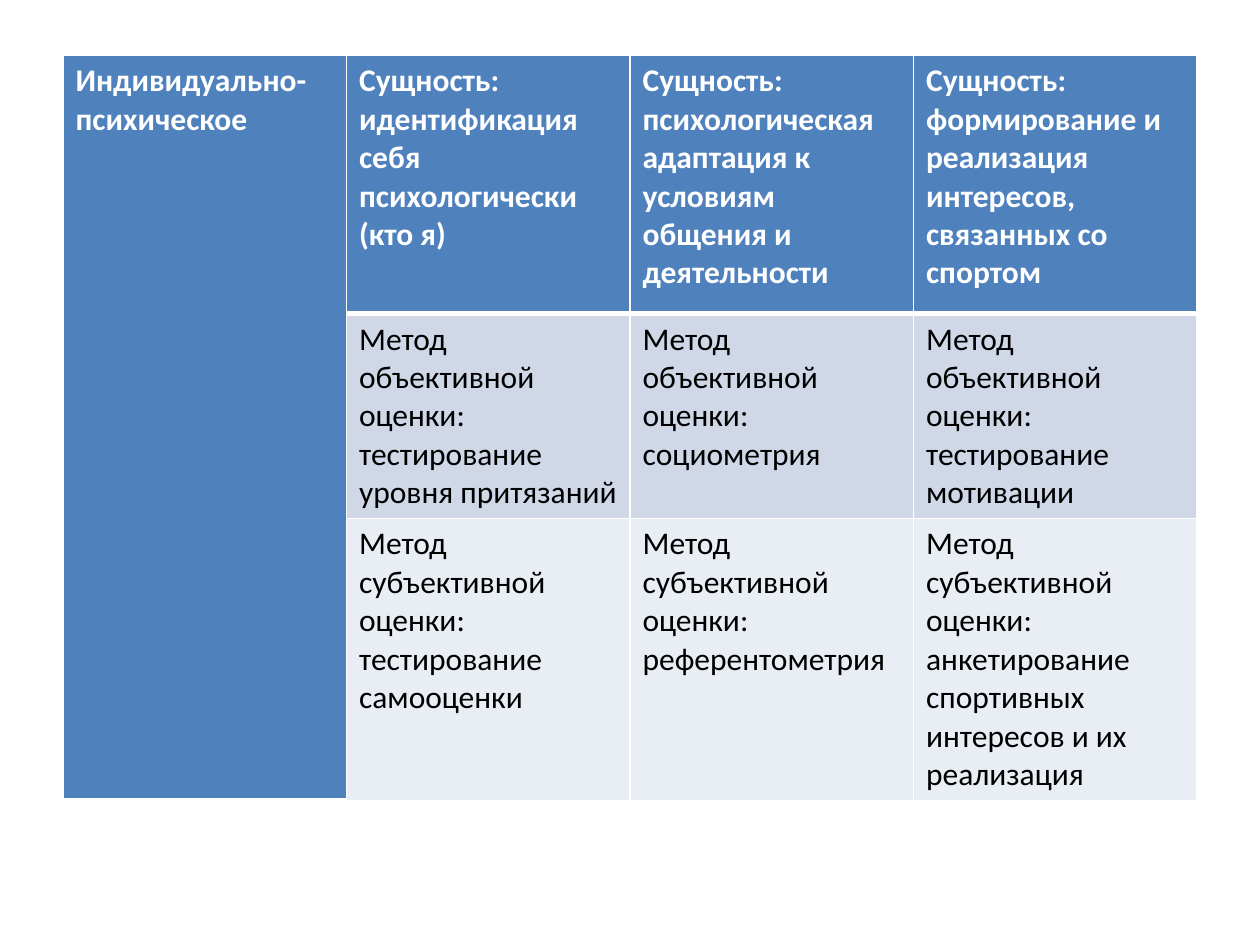
from lxml import etree
from pptx import Presentation
from pptx import util as u
from pptx.dml.color import RGBColor
from pptx.oxml.ns import qn

WIDTH, HEIGHT = 10, 7.5
COLUMN = 2.25
ROW_HEIGHTS = (2.05, 1.62, 2.23)

ASPECT = "Индивидуально-психическое"
ESSENCE = (
    "идентификация себя психологически (кто я)",
    "психологическая адаптация к условиям общения и деятельности",
    "формирование и реализация интересов, связанных со спортом",
)
OBJECTIVE = (
    "тестирование уровня притязаний",
    "социометрия",
    "тестирование мотивации",
)
SUBJECTIVE = (
    "тестирование самооценки",
    "референтометрия",
    "анкетирование спортивных интересов и их реализация",
)
# Lead-in, entries and band fill of each row
BANDS = (
    ("Сущность", ESSENCE, "4F81BD"),
    ("Метод объективной оценки", OBJECTIVE, "D0D8E8"),
    ("Метод субъективной оценки", SUBJECTIVE, "E9EDF4"),
)


def colour(value):
    return RGBColor.from_string(value)


class MethodsSlide:
    """Holds the style and the slide being built."""

    font, size = "Calibri", 18
    rule, header_text, body_text = "FFFFFF", "FFFFFF", "000000"

    def __init__(self, deck):
        self.slide = deck.slides.add_slide(deck.slide_layouts[6])

    def borders(self, cell, top=1, bottom=1):
        """Draw the rules round a cell; must run before the cell is filled."""
        properties = cell._tc.get_or_add_tcPr()
        for side, points in (("L", 1), ("R", 1), ("T", top), ("B", bottom)):
            line = etree.SubElement(properties, qn(f"a:ln{side}"), w=str(u.Pt(points)))
            fill = etree.SubElement(line, qn("a:solidFill"))
            etree.SubElement(fill, qn("a:srgbClr"), val=self.rule)

    def cell(self, cell, fill, wording="", header=False, **rules):
        self.borders(cell, **rules)
        cell.fill.solid()
        cell.fill.fore_color.rgb = colour(fill)
        if wording:
            run = cell.text_frame.paragraphs[0].add_run()
            run.text = wording
            run.font.name, run.font.size = self.font, u.Pt(self.size)
            run.font.bold = header
            run.font.color.rgb = colour(self.header_text if header else self.body_text)

    def table(self, left, top, bands, aspect):
        columns = len(bands[0][1]) + 1
        grid = self.slide.shapes.add_table(
            len(bands), columns, u.Inches(left), u.Inches(top),
            u.Inches(columns * COLUMN), u.Inches(sum(ROW_HEIGHTS))).table
        for column in grid.columns:
            column.width = u.Inches(COLUMN)
        for row, height in zip(grid.rows, ROW_HEIGHTS):
            row.height = u.Inches(height)

        grid.cell(0, 0).merge(grid.cell(len(bands) - 1, 0))
        for r, (lead, entries, fill) in enumerate(bands):
            header = r == 0
            self.cell(grid.cell(r, 0), bands[0][2], aspect if header else "",
                      header=True, bottom=3 if header else 1)
            for c, entry in enumerate(entries, start=1):
                self.cell(grid.cell(r, c), fill, f"{lead}: {entry}", header,
                          top=3 if r == 1 else 1, bottom=3 if header else 1)


def main():
    deck = Presentation()
    deck.slide_width, deck.slide_height = u.Inches(WIDTH), u.Inches(HEIGHT)
    methods = MethodsSlide(deck)
    methods.table((WIDTH - 4 * COLUMN) / 2, 0.44, BANDS, ASPECT)
    deck.save("out.pptx")


if __name__ == "__main__":
    main()
